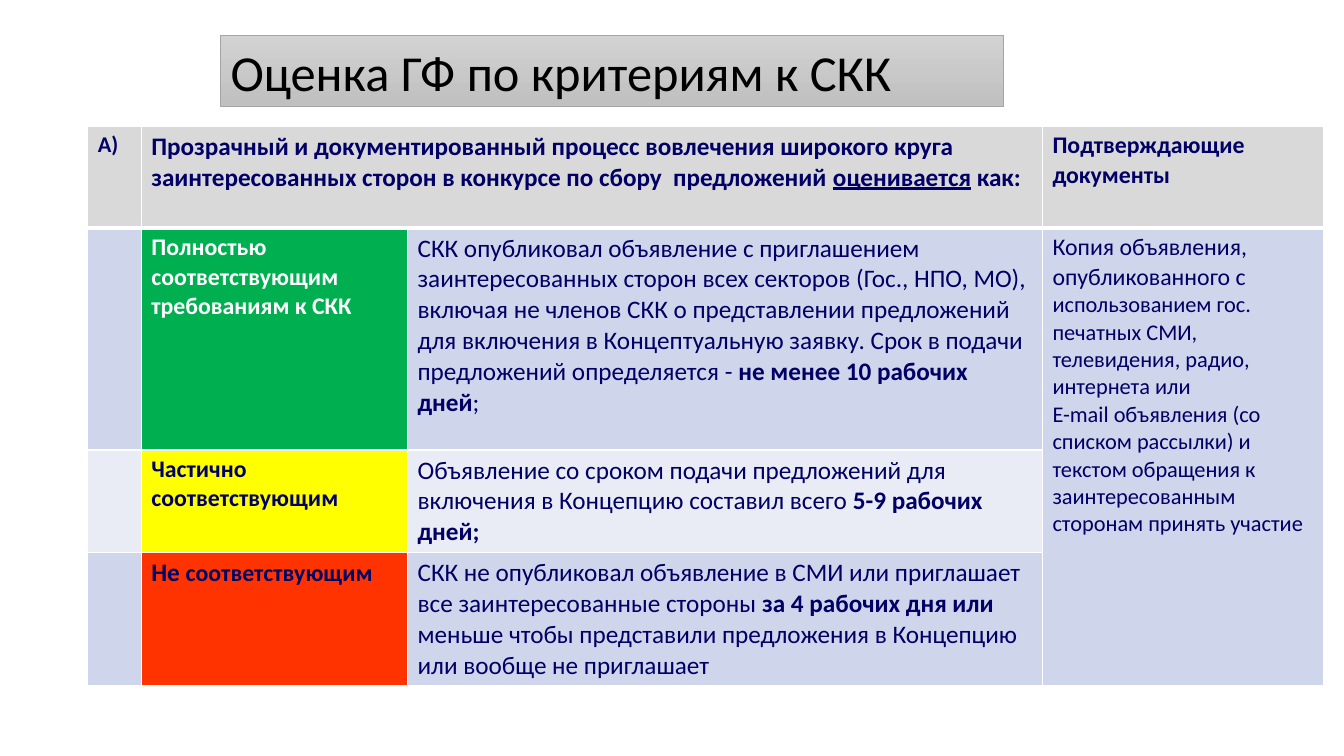
"""Build the slide that rates a call for proposals against the CCM criteria."""
from dataclasses import dataclass

from lxml import etree
from pptx import Presentation, util as u
from pptx.dml.color import RGBColor
from pptx.enum import shapes, text
from pptx.oxml.ns import qn


@dataclass(frozen=True)
class Theme:
    font: str = "Calibri"
    ink: str = "000066"
    white: str = "FFFFFF"
    black: str = "000000"
    header: str = "D9D9D9"
    band: str = "CFD5EA"
    light: str = "E9EBF5"
    full: str = "00B050"
    partial: str = "FFFF00"
    failed: str = "FF3300"
    title_top: str = "D2D2D2"
    title_bottom: str = "C0C0C0"
    title_line: str = "A5A5A5"
    title_size: int = 36
    large: int = 18
    medium: int = 17
    small: int = 16
    thin: int = 1
    thick: int = 3


THEME = Theme()
L, M, S = THEME.large, THEME.medium, THEME.small

TITLE = "Оценка ГФ по критериям к СКК"
TITLE_PLACE = (5.56, 0.89, 19.74, 1.8)
TABLE_CORNER = (2.21, 3.18)
COLUMNS = (1.35, 6.71, 16, 7.09)
ROWS = (2.57, 5.59, 2.59, 3.35)
MERGES = [((0, 1), (0, 2)), ((1, 3), (3, 3))]
ROW_FILLS = (THEME.header, THEME.band, THEME.light, THEME.band)
RATING_FILLS = {(1, 1): THEME.full, (2, 1): THEME.partial, (3, 1): THEME.failed}
RATING_INKS = {(1, 1): THEME.white}

# Each cell holds paragraphs; each paragraph holds (wording, size, style) runs.
CELLS = {
    (0, 0): [[("А)", S, "b")]],
    (0, 1): [[
        ("Прозрачный и документированный процесс вовлечения широкого круга "
         "заинтересованных сторон в конкурсе по сбору  предложений ", L, "b"),
        ("оценивается", L, "bu"),
        (" как:", L, "b"),
    ]],
    (0, 3): [[("Подтверждающие документы", M, "b")]],
    (1, 1): [[("Полностью соответствующим", M, "b")],
             [("требованиям к СКК", M, "b")]],
    (1, 2): [[
        ("СКК опубликовал объявление с приглашением заинтересованных сторон "
         "всех секторов (Гос., НПО, МО), включая не членов СКК о представлении "
         "предложений для включения в Концептуальную заявку. Срок в подачи "
         "предложений определяется - ", L, ""),
        ("не менее 10 рабочих дней", L, "b"),
        (";", L, ""),
    ]],
    (1, 3): [[
        ("Копия объявления, опубликованного с ", M, ""),
        ("использованием гос. печатных СМИ, телевидения, радио, интернета или\n"
         "E-mail объявления (со списком рассылки) и текстом обращения к "
         "заинтересованным сторонам принять участие", S, ""),
    ]],
    (2, 1): [[("Частично соответствующим", M, "b")]],
    (2, 2): [[
        ("Объявление со сроком подачи предложений для включения в Концепцию "
         "составил всего ", L, ""),
        ("5-9 рабочих дней;", L, "b"),
    ]],
    (3, 1): [[("Не ", L, "b"), ("соответствующим", M, "b")]],
    (3, 2): [[
        ("СКК не опубликовал объявление в СМИ или приглашает все "
         "заинтересованные стороны ", L, ""),
        ("за 4 рабочих дня или ", L, "b"),
        ("меньше чтобы представили предложения в Концепцию или вообще не "
         "приглашает", L, ""),
    ]],
}


def add_span(para, wording, size, color, style=""):
    """Add runs to a paragraph, with a line break at each newline."""
    for number, line in enumerate(wording.split("\n")):
        if number:
            para.add_line_break()
        span = para.add_run()
        span.text = line
        span.font.name = THEME.font
        span.font.size = u.Pt(size)
        span.font.color.rgb = RGBColor.from_string(color)
        span.font.bold = "b" in style
        span.font.underline = "u" in style


def write_cell(cell, paragraphs, color):
    """Fill a cell with its paragraphs."""
    frame = cell.text_frame
    for number, spans in enumerate(paragraphs):
        para = frame.add_paragraph() if number else frame.paragraphs[0]
        for wording, size, style in spans:
            add_span(para, wording, size, color, style)


def add_borders(cell, row):
    """Draw white cell borders, thick between the header and the body."""
    properties = cell._tc.get_or_add_tcPr()
    widths = {
        "a:lnL": THEME.thin,
        "a:lnR": THEME.thin,
        "a:lnT": THEME.thick if row == 1 else THEME.thin,
        "a:lnB": THEME.thick if row == 0 else THEME.thin,
    }
    for position, (side, width) in enumerate(widths.items()):
        line = etree.Element(qn(side), w=str(u.Pt(width)))
        fill = etree.SubElement(line, qn("a:solidFill"))
        etree.SubElement(fill, qn("a:srgbClr"), val=THEME.white)
        properties.insert(position, line)


def add_title(page):
    """Add the shaded title bar."""
    box = page.shapes.add_shape(shapes.MSO_SHAPE.RECTANGLE, *map(u.Cm, TITLE_PLACE))
    box.shadow.inherit = False
    box.fill.gradient()
    box.fill.gradient_angle = 270
    for stop, color in zip(box.fill.gradient_stops, (THEME.title_top, THEME.title_bottom)):
        stop.color.rgb = RGBColor.from_string(color)
    box.line.color.rgb = RGBColor.from_string(THEME.title_line)
    box.line.width = u.Pt(0.5)
    frame = box.text_frame
    frame.word_wrap = True
    frame.auto_size = text.MSO_AUTO_SIZE.SHAPE_TO_FIT_TEXT
    para = frame.paragraphs[0]
    para.alignment = text.PP_ALIGN.LEFT
    add_span(para, TITLE, THEME.title_size, THEME.black)


def add_criteria(page):
    """Add the table of ratings and supporting documents."""
    place = (*TABLE_CORNER, sum(COLUMNS), sum(ROWS))
    table = page.shapes.add_table(len(ROWS), len(COLUMNS), *map(u.Cm, place)).table
    for column, width in zip(table.columns, COLUMNS):
        column.width = u.Cm(width)
    for line, height in zip(table.rows, ROWS):
        line.height = u.Cm(height)
    for first, last in MERGES:
        table.cell(*first).merge(table.cell(*last))
    for row, row_fill in enumerate(ROW_FILLS):
        for column in range(len(COLUMNS)):
            spot = (row, column)
            cell = table.cell(*spot)
            cell.fill.solid()
            cell.fill.fore_color.rgb = RGBColor.from_string(RATING_FILLS.get(spot, row_fill))
            add_borders(cell, row)
            write_cell(cell, CELLS.get(spot, []), RATING_INKS.get(spot, THEME.ink))


def main():
    """Build and save the deck."""
    deck = Presentation()
    deck.slide_width, deck.slide_height = u.Cm(33.87), u.Cm(19.05)
    page = deck.slides.add_slide(deck.slide_layouts[6])
    add_criteria(page)
    add_title(page)
    deck.save("out.pptx")


if __name__ == "__main__":
    main()
